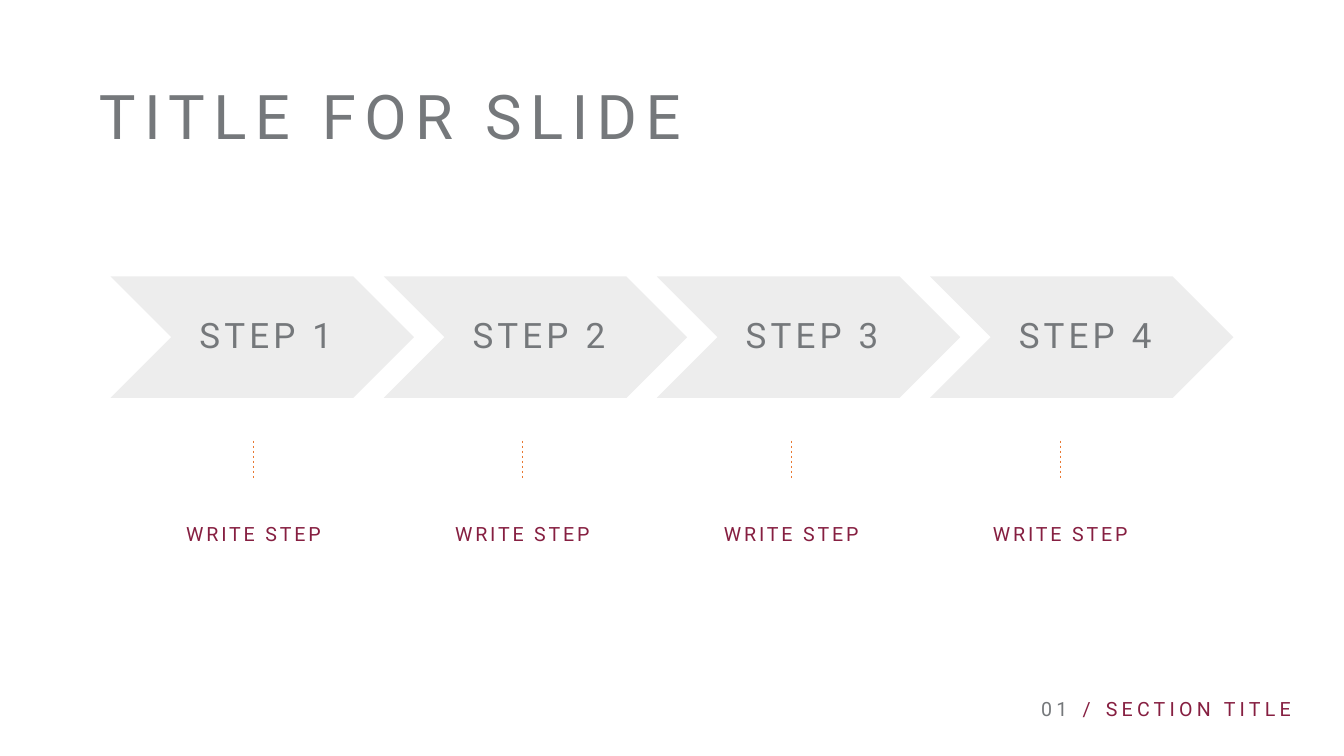
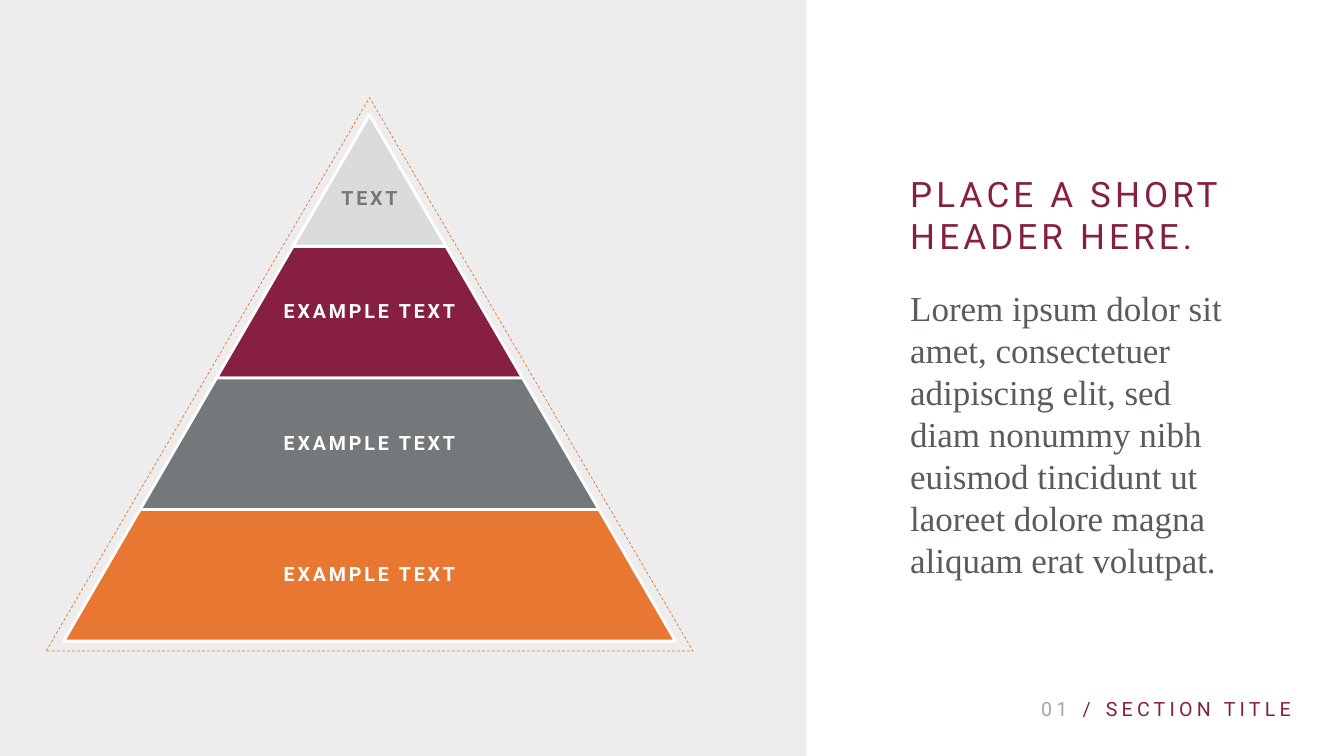
from dataclasses import dataclass

from lxml import etree
from pptx import Presentation
from pptx.dml.color import RGBColor
from pptx.enum.dml import MSO_LINE
from pptx.enum.shapes import MSO_CONNECTOR, MSO_SHAPE
from pptx.enum.text import MSO_ANCHOR, PP_ALIGN
from pptx.oxml.ns import qn
from pptx.util import Pt

CHEVRON = MSO_SHAPE.CHEVRON
RECTANGLE = MSO_SHAPE.RECTANGLE
TRAPEZOID = MSO_SHAPE.TRAPEZOID
TRIANGLE = MSO_SHAPE.ISOSCELES_TRIANGLE
STRAIGHT = MSO_CONNECTOR.STRAIGHT
DASH = MSO_LINE.DASH
TOP, MIDDLE, BOTTOM = MSO_ANCHOR.TOP, MSO_ANCHOR.MIDDLE, MSO_ANCHOR.BOTTOM
LEFT, CENTER, RIGHT = PP_ALIGN.LEFT, PP_ALIGN.CENTER, PP_ALIGN.RIGHT


@dataclass(frozen=True)
class Theme:
    """Colours, fonts and type sizes of the deck."""

    maroon: str = "861F41"
    orange: str = "E87731"
    gray: str = "75787B"
    dark: str = "585C5E"
    mid: str = "A5A5A5"
    silver: str = "DBDBDB"
    pale: str = "EDEDED"
    white: str = "FFFFFF"
    sans: str = "Roboto"
    serif: str = "Times New Roman"
    title: int = 44
    body: int = 25
    small: int = 14
    hairline: float = 0.5
    border: float = 2
    inset: float = 3.6


T = Theme()


def rgb(color):
    """Turn a hex string into a colour."""
    return RGBColor.from_string(color)


def write(shape, text, size, color, spc=0, align=LEFT, anchor=TOP, font=T.sans,
          bold=False, leading=None, insets=(T.inset,) * 4, wrap=True):
    """Put one styled paragraph into a shape."""
    tf = shape.text_frame
    tf.word_wrap = wrap
    tf.vertical_anchor = anchor
    tf.margin_left, tf.margin_top, tf.margin_right, tf.margin_bottom = map(Pt, insets)
    p = tf.paragraphs[0]
    p.text = text
    p.alignment = align
    if leading:
        p.line_spacing = leading
    p.font.name = font
    p.font.size = Pt(size)
    p.font.bold = bold
    p.font.color.rgb = rgb(color)
    p._p.get_or_add_pPr().get_or_add_defRPr().set("spc", str(spc * 100))


def add_text(s, box, text, size, color, **style):
    """Add a text box."""
    write(s.shapes.add_textbox(*map(Pt, box)), text, size, color, **style)


def set_line(line, color, width, dash=None):
    """Style an outline or a connector."""
    line.color.rgb = rgb(color)
    line.width = Pt(width)
    if dash:
        line.dash_style = dash


def add_shape(s, kind, box, fill=None):
    """Add a flat shape without an outline."""
    sp = s.shapes.add_shape(kind, *map(Pt, box))
    sp.shadow.inherit = False
    if fill:
        sp.fill.solid()
        sp.fill.fore_color.rgb = rgb(fill)
    else:
        sp.fill.background()
    sp.line.fill.background()
    return sp


def add_tick(s, x, top, bottom):
    """Add a dashed vertical line."""
    cx = s.shapes.add_connector(STRAIGHT, Pt(x), Pt(top), Pt(x), Pt(bottom))
    set_line(cx.line, T.orange, T.hairline, DASH)
    etree.SubElement(cx._element.spPr, qn("a:effectLst"))


def add_footer(s, box, number, section, number_color):
    """Place page number, slash and section title in a strip."""
    x, y, w, h = box
    parts = (
        (0, 56, number, number_color, 3, RIGHT),
        (53.3, 19.4, "/", T.maroon, 2, RIGHT),
        (76.3, w - 76.3, section, T.maroon, 3, LEFT),
    )
    for dx, width, text, color, spc, align in parts:
        add_text(s, (x + dx, y, width, h), text, T.small, color, spc=spc,
                 align=align, anchor=BOTTOM, leading=0.9)


def add_chevrons(s, box, names, overlap):
    """Fill a strip with overlapping chevrons."""
    x, y, w, h = box
    width = (w + overlap * (len(names) - 1)) / len(names)
    for i, name in enumerate(names):
        sp = add_shape(s, CHEVRON, (x + i * (width - overlap), y, width, h), T.pale)
        write(sp, name, T.body, T.gray, spc=3, align=CENTER, anchor=MIDDLE,
              leading=0.9, insets=(8, 3, 3, 3))


def add_captions(s, box, captions):
    """Place a tick and a caption in each equal column."""
    x, y, w, h = box
    column = w / len(captions)
    label_h = 24.5
    for i, caption in enumerate(captions):
        left = x + i * column
        add_tick(s, left + column / 2, y, y + 28)
        add_text(s, (left, y + h - label_h, column, label_h), caption, T.small,
                 T.maroon, spc=2, align=CENTER)


def add_pyramid(s, box, tiers):
    """Stack trapezoids into a pyramid, narrowest tier first."""
    x, y, w, h = box
    step_w, step_h = w / len(tiers), h / len(tiers)
    for n, (text, fill, color) in enumerate(tiers, 1):
        width = n * step_w
        tier = (x + (w - width) / 2, y + (n - 1) * step_h, width, step_h)
        sp = add_shape(s, TRAPEZOID, tier, fill)
        sp.adjustments[0] = step_w / 2 / step_h
        set_line(sp.line, T.white, T.border)
        lift = 5 if n == 1 else step_h / 3 / n
        write(sp, text, T.small, color, spc=2, align=CENTER, anchor=MIDDLE,
              bold=True, leading=0.9, insets=(1.5, 1.5, 1.5, 1.5 + lift), wrap=False)


def add_message(s, box, header, body):
    """Place a header above body text."""
    x, y, w, h = box
    add_text(s, (x, y, w, 68), header, T.body, T.maroon, spc=3)
    add_text(s, (x, y + 81.4, 232, h - 81.4), body, T.body, T.dark, font=T.serif)


def steps_slide(s, box):
    """Build the process slide."""
    x, y, w, h = box
    add_chevrons(s, (x + 79, y + 197.5, 802, 86.7), [f"STEP {n}" for n in range(1, 5)], 21.6)
    add_captions(s, (x + 85, y + 314.7, 768.4, 79.2), ["WRITE STEP"] * 4)
    add_text(s, (x + 67, y + 60.5, 577, 52.5), "TITLE FOR SLIDE", T.title, T.gray,
             spc=6, anchor=BOTTOM, leading=0.9)
    add_footer(s, (x + 710, y + 486, w - 710, 32.4), "01", "SECTION TITLE", T.gray)


def pyramid_slide(s, box):
    """Build the pyramid slide."""
    x, y, w, h = box
    add_shape(s, RECTANGLE, (x, y, 576, h), T.pale)
    add_footer(s, (x + 710, y + 486, w - 710, 32.4), "01", "SECTION TITLE", T.mid)
    add_message(
        s, (x + 646.6, y + 119.5, w - 646.6, 301), "PLACE A SHORT HEADER HERE.",
        "Lorem ipsum dolor sit amet, consectetuer adipiscing elit, sed diam nonummy "
        "nibh euismod tincidunt ut laoreet dolore magna aliquam erat volutpat.")
    add_pyramid(s, (x + 45.5, y + 82, 437, 376), (
        ("TEXT", T.silver, T.gray),
        ("EXAMPLE TEXT", T.maroon, T.white),
        ("EXAMPLE TEXT", T.gray, T.white),
        ("EXAMPLE TEXT", T.orange, T.white),
    ))
    outline = add_shape(s, TRIANGLE, (x + 33, y + 69.7, 462, 395.3))
    set_line(outline.line, T.orange, T.hairline, DASH)


def main():
    """Build and save the deck."""
    prs = Presentation()
    prs.slide_width, prs.slide_height = Pt(960), Pt(540)
    for build in (steps_slide, pyramid_slide):
        build(prs.slides.add_slide(prs.slide_layouts[6]), (0, 0, 960, 540))
    prs.save("out.pptx")


if __name__ == "__main__":
    main()
